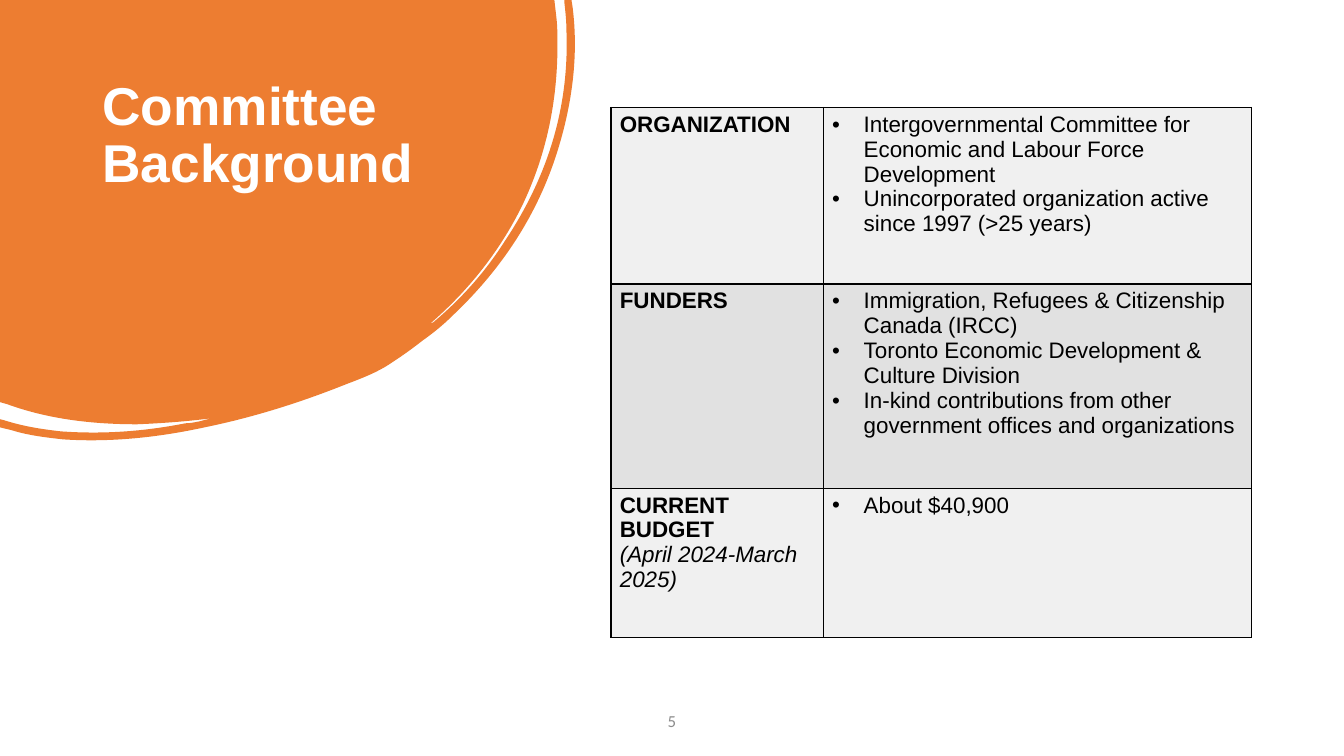
import pptx
import pptx.dml.color
import pptx.enum.text
import pptx.oxml
import pptx.oxml.ns
import pptx.util

Pt = pptx.util.Pt
RGB = pptx.dml.color.RGBColor
PP_ALIGN = pptx.enum.text.PP_ALIGN
ANCHOR = pptx.enum.text.MSO_ANCHOR
NS = pptx.oxml.ns.nsdecls("a")
qn = pptx.oxml.ns.qn

ORANGE = RGB(0xED, 0x7D, 0x31)
WHITE = RGB(0xFF, 0xFF, 0xFF)
BLACK = RGB(0, 0, 0)
GREY = RGB(0x8C, 0x8C, 0x8C)
BANDS = [RGB(0xF0, 0xF0, 0xF0), RGB(0xE1, 0xE1, 0xE1)]

# Content: row height, heading, note under the heading, bullets
TITLE = "Committee Background"
PAGE = "5"
ROWS = [
    (126, "ORGANIZATION", None, [
        "Intergovernmental Committee for Economic and Labour Force Development",
        "Unincorporated organization active since 1997 (>25 years)"]),
    (146, "FUNDERS", None, [
        "Immigration, Refugees & Citizenship Canada (IRCC)",
        "Toronto Economic Development & Culture Division",
        "In-kind contributions from other government offices and organizations"]),
    (106.5, "CURRENT BUDGET", "(April 2024-March 2025)", ["About $40,900"]),
]
COL_WIDTHS = [151.7, 305.8]

# Blob outline from the top left corner: pairs are lines, sixes are Bezier curves
BLOB_SIZE = (411, 314.6)
BLOB = [
    (396, 0), (397.4, 12.2),
    (398.2, 18.7, 398.2, 25.9, 398.2, 32.4),
    (398.2, 72.7, 390.2, 110.9, 373, 146.9),
    (357.1, 179.3, 334.8, 207.4, 307.4, 231.1),
    (308.9, 231.1, 310.3, 229.7, 311, 229),
    (330.5, 212.4, 347, 193.7, 360.7, 172.1),
    (391, 126.7, 406.8, 77, 404.6, 21.6),
    (404.6, 15.1, 403.9, 8.6, 403.2, 2.2),
    (403.2, 0), (408.2, 0), (409, 5),
    (413.3, 38.9, 409, 73.4, 398.2, 108),
    (383.8, 154.1, 357.8, 193, 322.6, 226.1),
    (316.1, 232.6, 308.9, 238.3, 301.7, 243.4),
    (294.5, 249.1, 287.3, 254.2, 278.6, 259.9),
    (270, 265.7, 259.2, 270, 247.7, 274.3),
    (215.3, 287.3, 181.4, 298.1, 146.2, 305.3),
    (113, 312.5, 79.2, 316.1, 45.4, 313.9),
    (32.4, 312.5, 20.2, 311, 8.6, 307.4),
    (0, 305.3), (0, 299.5), (2.9, 300.2),
    (16.6, 304.6, 30.2, 306.7, 43.9, 308.2),
    (74.2, 310.3, 103, 308.2, 132.5, 302.4),
    (136.1, 302.4, 139, 301.7, 142.6, 301),
    (145.4, 300.2, 148.3, 299.5, 151.2, 298.8),
    (133.9, 301, 115.9, 302.4, 97.9, 303.1),
    (66.2, 303.1, 34.6, 299.5, 5, 288.7),
    (0, 287.3),
]


def add_blob(s):
    """Draw the anchor points, then bend the segments that are curves."""
    fb = s.shapes.build_freeform(0, 0)
    fb.add_line_segments([(Pt(seg[-2]), Pt(seg[-1])) for seg in BLOB], close=True)
    sp = fb.convert_to_shape()
    sp.width, sp.height = (Pt(n) for n in BLOB_SIZE)
    path = next(sp._element.iter(qn("a:path")))
    path.set("w", str(sp.width))
    path.set("h", str(sp.height))
    for line, seg in zip(path.findall(qn("a:lnTo")), BLOB):
        if len(seg) == 6:
            points = "".join(f'<a:pt x="{Pt(x)}" y="{Pt(y)}"/>'
                             for x, y in zip(seg[::2], seg[1::2]))
            path.replace(line, pptx.oxml.parse_xml(
                f"<a:cubicBezTo {NS}>{points}</a:cubicBezTo>"))
    return sp


def write(tf, text, size=16, color=BLACK, font="Arial", bold=False, italic=False,
          align=PP_ALIGN.LEFT, spacing=None, bullet=False, first=True):
    p = tf.paragraphs[0] if first else tf.add_paragraph()
    p.alignment = align
    if spacing:
        p.line_spacing = spacing
    if bullet:
        pPr = p._p.get_or_add_pPr()
        pPr.set("marL", str(Pt(22.5)))
        pPr.set("indent", str(-Pt(22.5)))
        pPr.append(pptx.oxml.parse_xml(f'<a:buFont {NS} typeface="Arial"/>'))
        pPr.append(pptx.oxml.parse_xml(f'<a:buChar {NS} char="•"/>'))
    r = p.add_run()
    r.text = text
    r.font.name, r.font.size = font, Pt(size)
    r.font.bold, r.font.italic = bold, italic
    r.font.color.rgb = color


def style_cell(cell, fill):
    cell.margin_left = cell.margin_right = Pt(6.4)
    cell.margin_top = cell.margin_bottom = Pt(3.3)
    tcPr = cell._tc.get_or_add_tcPr()
    for side in ("lnL", "lnR", "lnT", "lnB"):
        tcPr.append(pptx.oxml.parse_xml(
            f'<a:{side} {NS} w="{Pt(1)}"><a:solidFill>'
            f'<a:srgbClr val="{BLACK}"/></a:solidFill></a:{side}>'))
    cell.fill.solid()
    cell.fill.fore_color.rgb = fill


prs = pptx.Presentation()
prs.slide_width, prs.slide_height = Pt(960), Pt(540)
s = prs.slides.add_slide(prs.slide_layouts[5])

# Orange blob, placed behind the title
blob = add_blob(s)
blob.shadow.inherit = False
blob.fill.solid()
blob.fill.fore_color.rgb = ORANGE
blob.line.fill.background()
s.shapes._spTree.insert(2, blob._element)

# Title
title = s.shapes.title
title.left, title.top, title.width, title.height = Pt(66), Pt(53), Pt(253.5), Pt(160)
tf = title.text_frame
tf.word_wrap = True
tf.auto_size = pptx.enum.text.MSO_AUTO_SIZE.NONE
tf.vertical_anchor = ANCHOR.TOP
write(tf, TITLE, size=38, color=WHITE, bold=True, spacing=0.9)

# Page number
tf = s.shapes.add_textbox(Pt(318), Pt(500.5), Pt(324), Pt(28.8)).text_frame
tf.word_wrap = True
tf.vertical_anchor = ANCHOR.MIDDLE
write(tf, PAGE, size=12, color=GREY, font="Calibri", align=PP_ALIGN.CENTER)
tf.paragraphs[0].space_after = Pt(6)

# Background table
table = s.shapes.add_table(len(ROWS), 2, Pt(436.4), Pt(76.8), Pt(sum(COL_WIDTHS)),
                           Pt(sum(row[0] for row in ROWS))).table
table.first_row = table.horz_banding = False
for col, width in zip(table.columns, COL_WIDTHS):
    col.width = Pt(width)
for i, (height, heading, note, bullets) in enumerate(ROWS):
    table.rows[i].height = Pt(height)
    left, right = table.cell(i, 0), table.cell(i, 1)
    for cell in (left, right):
        style_cell(cell, BANDS[i % 2])
    write(left.text_frame, heading, bold=True)
    if note:
        write(left.text_frame, note, italic=True, first=False)
    for j, text in enumerate(bullets):
        write(right.text_frame, text, bullet=True, first=j == 0)

prs.save("out.pptx")
